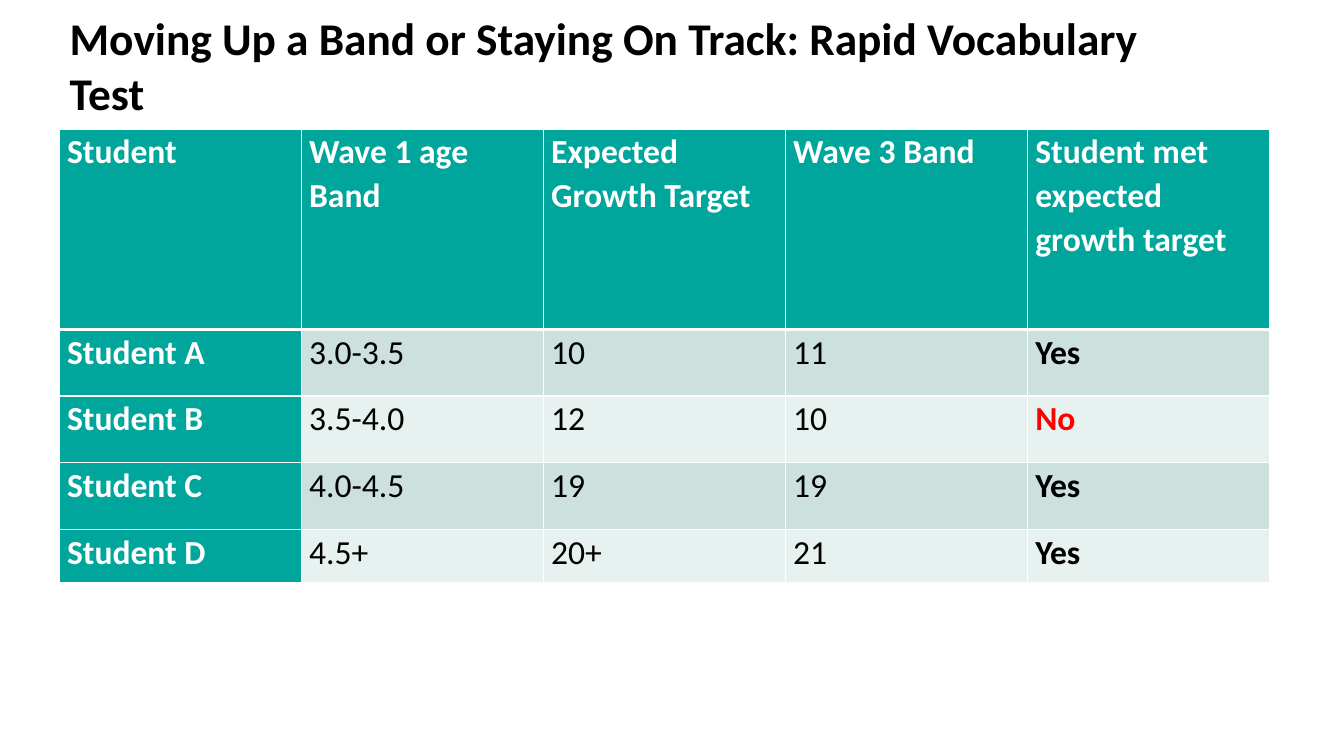
"""Builds the slide comparing vocabulary bands with expected growth targets."""
from pptx import Presentation
from pptx import util as u
from pptx.dml.color import RGBColor
from pptx.enum import text
from pptx.oxml import parse_xml
from pptx.oxml.ns import nsdecls

TITLE = "Moving Up a Band or Staying On Track: Rapid Vocabulary Test"
ROWS = [
    ("Student", "Wave 1 age Band", "Expected Growth Target", "Wave 3 Band",
     "Student met expected growth target"),
    ("Student A", "3.0-3.5", "10", "11", "Yes"),
    ("Student B", "3.5-4.0", "12", "10", "No"),
    ("Student C", "4.0-4.5", "19", "19", "Yes"),
    ("Student D", "4.5+", "20+", "21", "Yes"),
]
ROW_HEIGHTS = [5.05, 1.68, 1.68, 1.68, 1.35]
COL_WIDTH = 6.1
TITLE_BOX = (1.5, 0.76, 27.94, 1.75)
TABLE_AT = (1.5, 3.25)
THEME = {
    "font": "Calibri", "title_size": 32.4, "cell_size": 24,
    "ink": "000000", "light": "FFFFFF", "alert": "FF0000",
    "head": "00A69B", "bands": ("E7F1EF", "CCE1DE"),
    "rule": 1, "head_rule": 3,
}
CELL_FORMAT = {
    "margin_left": u.Cm(0.19), "margin_right": u.Cm(0.19),
    "margin_top": 0, "margin_bottom": 0,
    "vertical_anchor": text.MSO_ANCHOR.TOP,
}
PARAGRAPH_FORMAT = {"line_spacing": 1.07, "space_after": u.Pt(8)}
TITLE_FORMAT = {
    "word_wrap": True, "auto_size": text.MSO_AUTO_SIZE.NONE,
    "vertical_anchor": text.MSO_ANCHOR.MIDDLE,
}


def apply(target, values):
    """Set each named attribute on the target."""
    for name, value in values.items():
        setattr(target, name, value)


def style_font(font, size, color, bold):
    """Give a font the theme typeface with its size, colour and weight."""
    apply(font, {"name": THEME["font"], "size": u.Pt(size), "bold": bold})
    font.color.rgb = RGBColor.from_string(color)


def add_borders(cell, widths):
    """Draw the four cell borders, widths in points keyed by side."""
    tc_pr = cell._tc.get_or_add_tcPr()
    for i, side in enumerate("LRTB"):
        tc_pr.insert(i, parse_xml(
            f'<a:ln{side} {nsdecls("a")} w="{u.Pt(widths[side])}"><a:solidFill>'
            f'<a:srgbClr val="{THEME["light"]}"/></a:solidFill></a:ln{side}>'))


def cell_style(row, col, value):
    """Return fill, text colour and weight for a table position."""
    if row == 0 or col == 0:
        return THEME["head"], THEME["light"], True
    color = THEME["alert"] if value == "No" else THEME["ink"]
    return THEME["bands"][row % 2], color, col == len(ROWS[0]) - 1


def add_title(s):
    """Place and format the title placeholder."""
    sp = s.shapes.title
    apply(sp, dict(zip(("left", "top", "width", "height"), map(u.Cm, TITLE_BOX))))
    tf = sp.text_frame
    apply(tf, TITLE_FORMAT)
    p = tf.paragraphs[0]
    p.alignment = text.PP_ALIGN.LEFT
    r = p.add_run()
    r.text = TITLE
    style_font(r.font, THEME["title_size"], THEME["ink"], True)


def add_results(s):
    """Add the table of student results."""
    n_cols = len(ROWS[0])
    table = s.shapes.add_table(
        len(ROWS), n_cols, *map(u.Cm, TABLE_AT),
        u.Cm(COL_WIDTH * n_cols), u.Cm(sum(ROW_HEIGHTS))).table
    table.first_col = True
    for column in table.columns:
        column.width = u.Cm(COL_WIDTH)
    for i, values in enumerate(ROWS):
        table.rows[i].height = u.Cm(ROW_HEIGHTS[i])
        widths = dict.fromkeys("LRTB", THEME["rule"])
        if i < 2:
            widths["BT"[i]] = THEME["head_rule"]
        for j, value in enumerate(values):
            cell = table.cell(i, j)
            fill, color, bold = cell_style(i, j, value)
            apply(cell, CELL_FORMAT)
            cell.fill.solid()
            cell.fill.fore_color.rgb = RGBColor.from_string(fill)
            add_borders(cell, widths)
            p = cell.text_frame.paragraphs[0]
            apply(p, PARAGRAPH_FORMAT)
            r = p.add_run()
            r.text = value
            style_font(r.font, THEME["cell_size"], color, bold)


def main():
    """Build and save the slide."""
    prs = Presentation()
    apply(prs, {"slide_width": u.Cm(33.87), "slide_height": u.Cm(19.05)})
    s = prs.slides.add_slide(prs.slide_layouts[5])
    add_title(s)
    add_results(s)
    prs.save("out.pptx")


if __name__ == "__main__":
    main()
